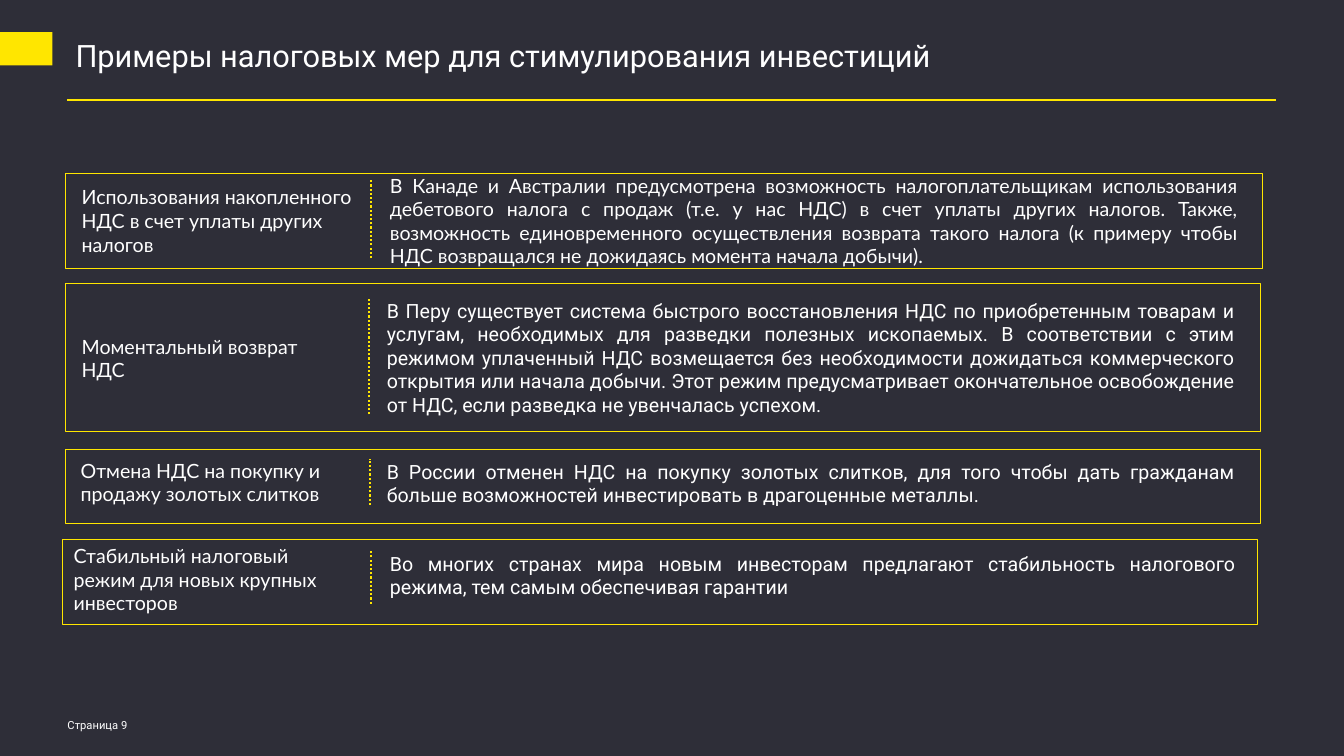
from dataclasses import dataclass

from lxml.etree import SubElement
from pptx import Presentation
from pptx.dml.color import RGBColor
from pptx.enum.dml import MSO_LINE
from pptx.enum.shapes import MSO_CONNECTOR, MSO_SHAPE
from pptx.enum.text import MSO_ANCHOR, MSO_AUTO_SIZE, PP_ALIGN
from pptx.oxml.ns import qn
from pptx.util import Emu, Pt


@dataclass(frozen=True)
class Theme:
    """Colours, fonts and point sizes of the slide."""
    dark: RGBColor = RGBColor(0x2E, 0x2E, 0x38)
    yellow: RGBColor = RGBColor(0xFF, 0xE6, 0x00)
    white: RGBColor = RGBColor(0xFF, 0xFF, 0xFF)
    main_font: str = "Roboto"
    label_font: str = "Lato"
    title_size: int = 22
    text_size: int = 14
    footer_size: int = 8
    rule_width: float = 1.5
    frame_width: float = 0.75


@dataclass(frozen=True)
class Measure:
    """One framed tax measure: boxes are left, top, width, height in px."""
    label: str
    details: str
    frame: tuple
    label_box: tuple
    details_box: tuple
    divider: tuple
    details_font: str = Theme.main_font


THEME = Theme()
PX = 9144
TEXT_INSETS = (6, 5, 6, 5)

MEASURES = [
    Measure(
        "Использования накопленного НДС в счет уплаты других налогов",
        "В Канаде и Австралии предусмотрена возможность налогоплательщикам использования "
        "дебетового налога с продаж (т.е. у нас НДС) в счет уплаты других налогов. Также, "
        "возможность единовременного осуществления возврата такого налога (к примеру чтобы "
        "НДС возвращался не дожидаясь момента начала добычи).",
        (65, 172, 1188, 94), (75, 179, 288, 80), (381, 167, 854, 104), (368, 177, 256),
        THEME.label_font),
    Measure(
        "Моментальный возврат НДС",
        "В Перу существует система быстрого восстановления НДС по приобретенным товарам и "
        "услугам, необходимых для разведки полезных ископаемых. В соответствии с этим "
        "режимом уплаченный НДС возмещается без необходимости дожидаться коммерческого "
        "открытия или начала добычи. Этот режим предусматривает окончательное освобождение "
        "от НДС, если разведка не увенчалась успехом.",
        (65, 281, 1186, 147), (75, 327, 269, 33), (378, 291, 854, 127), (366, 296, 411)),
    Measure(
        "Отмена НДС на покупку и продажу золотых слитков",
        "В России отменен НДС на покупку золотых слитков, для того чтобы дать гражданам "
        "больше возможностей инвестировать в драгоценные металлы.",
        (65, 446, 1186, 73), (74, 450, 269, 57), (378, 451, 854, 57), (367, 455, 501)),
    Measure(
        "Стабильный налоговый режим для новых крупных инвесторов",
        "Во многих странах мира новым инвесторам предлагают стабильность налогового режима, "
        "тем самым обеспечивая гарантии",
        (62, 535, 1186, 85), (67, 535, 288, 80), (381, 542, 852, 57), (368, 545, 599)),
]


def px(*lengths):
    """Turn px lengths into EMU."""
    return [Emu(length * PX) for length in lengths]


def style_text(frame, text, font, size, insets, align=PP_ALIGN.LEFT):
    """Fill a text frame with one formatted paragraph."""
    frame.text = text
    frame.word_wrap = True
    (frame.margin_left, frame.margin_top,
     frame.margin_right, frame.margin_bottom) = px(*insets)
    paragraph = frame.paragraphs[0]
    paragraph.alignment = align
    for run in paragraph.runs:
        run.font.name = font
        run.font.size = Pt(size)
        run.font.color.rgb = THEME.white
    return paragraph


def add_title(slide, text, box):
    """Place and format the title placeholder."""
    title = slide.shapes.title
    title.left, title.top, title.width, title.height = px(*box)
    frame = title.text_frame
    frame.auto_size = MSO_AUTO_SIZE.NONE
    frame.vertical_anchor = MSO_ANCHOR.TOP
    paragraph = style_text(frame, text, THEME.main_font, THEME.title_size, (10, 5, 10, 5))
    paragraph.line_spacing = 0.85


def add_text(slide, text, box, font, size=THEME.text_size, insets=TEXT_INSETS,
             align=PP_ALIGN.LEFT, anchor=MSO_ANCHOR.TOP):
    """Add a wrapped text box."""
    frame = slide.shapes.add_textbox(*px(*box)).text_frame
    style_text(frame, text, font, size, insets, align)
    frame.vertical_anchor = anchor


def add_rectangle(slide, box, filled):
    """Add a solid yellow block or a thin yellow frame."""
    rectangle = slide.shapes.add_shape(MSO_SHAPE.RECTANGLE, *px(*box))
    rectangle.shadow.inherit = False
    if filled:
        rectangle.fill.solid()
        rectangle.fill.fore_color.rgb = THEME.yellow
        rectangle.line.fill.background()
    else:
        rectangle.fill.background()
        rectangle.line.color.rgb = THEME.yellow
        rectangle.line.width = Pt(THEME.frame_width)


def add_rule(slide, start, end, dash=None):
    """Add a straight yellow line."""
    rule = slide.shapes.add_connector(MSO_CONNECTOR.STRAIGHT, *px(*start, *end))
    rule.line.color.rgb = THEME.yellow
    rule.line.width = Pt(THEME.rule_width)
    if dash:
        rule.line.dash_style = dash
    SubElement(rule._element.spPr, qn("a:effectLst"))


def add_measure(slide, measure):
    """Add a frame with its label, dotted divider and details."""
    add_rectangle(slide, measure.frame, filled=False)
    add_text(slide, measure.label, measure.label_box, THEME.label_font)
    x, top, bottom = measure.divider
    add_rule(slide, (x, bottom), (x, top), MSO_LINE.ROUND_DOT)
    add_text(slide, measure.details, measure.details_box, measure.details_font,
             align=PP_ALIGN.JUSTIFY, anchor=MSO_ANCHOR.MIDDLE)


def main():
    """Build and save the slide."""
    deck = Presentation()
    deck.slide_width, deck.slide_height = px(1334, 750)
    slide = deck.slides.add_slide(deck.slide_layouts.get_by_name("Title Only"))
    slide.background.fill.solid()
    slide.background.fill.fore_color.rgb = THEME.dark

    add_rule(slide, (67, 99), (1267, 99))
    add_title(slide, "Примеры налоговых мер для стимулирования инвестиций", (65, 37, 1201, 65))
    add_rectangle(slide, (0, 32, 52, 33), filled=True)
    for measure in MEASURES:
        add_measure(slide, measure)
    add_text(slide, "Страница 9", (67, 708, 87, 22), THEME.main_font,
             THEME.footer_size, (0, 5, 10, 5))
    deck.save("out.pptx")


if __name__ == "__main__":
    main()
